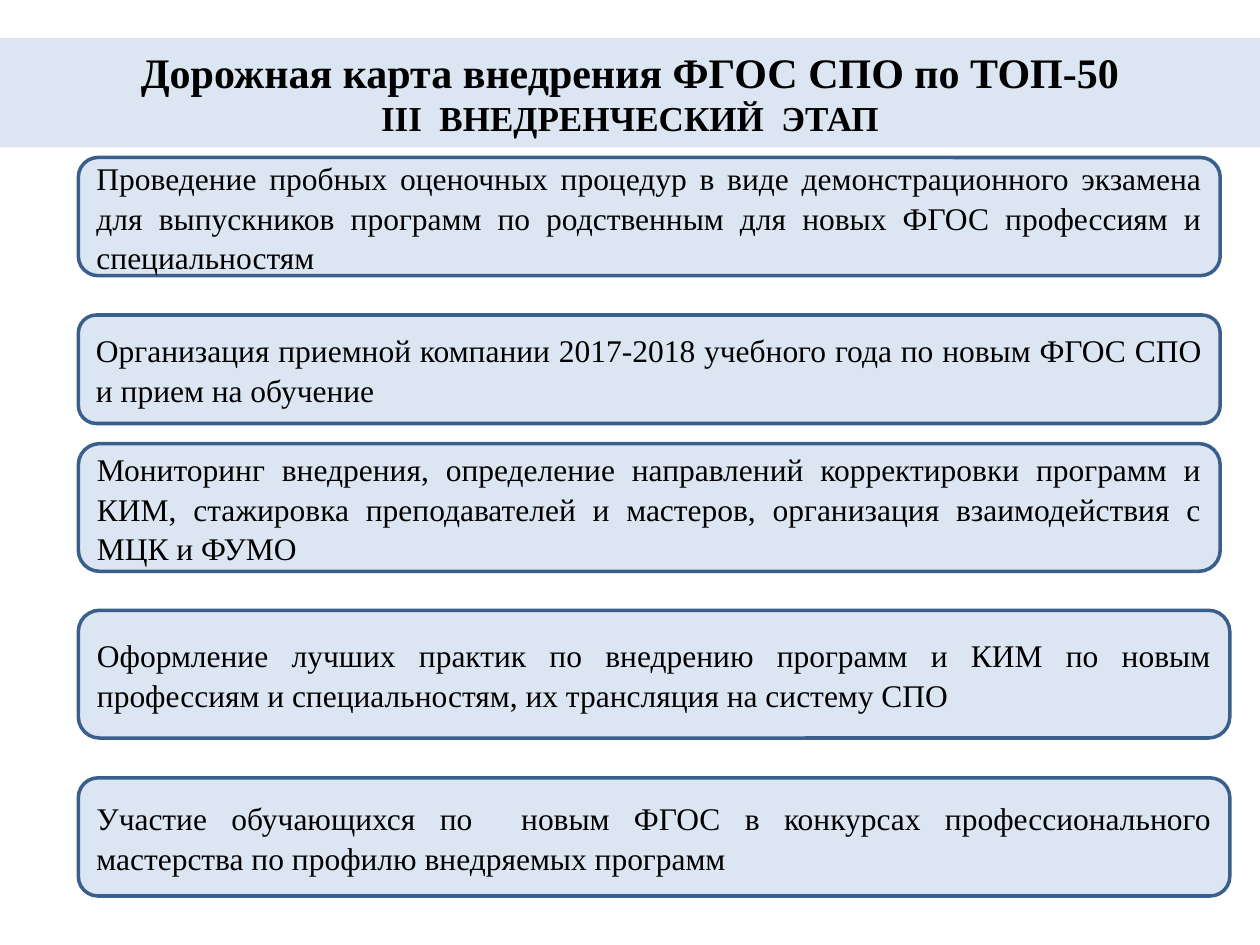
from pptx import Presentation
from pptx.dml.color import RGBColor as RGB
from pptx.enum.shapes import MSO_SHAPE as Kind
from pptx.enum.text import MSO_ANCHOR as Anchor, PP_ALIGN as Align
from pptx.util import Pt

# Content: heading lines with their size role
HEAD = [
    ("Дорожная карта внедрения ФГОС СПО по ТОП-50", "title"),
    ("III  ВНЕДРЕНЧЕСКИЙ  ЭТАП", "stage"),
]

# Content: steps as (top, width, height, text)
STEPS = [
    (90, 652.5, 67.5, "Проведение пробных оценочных процедур в виде демонстрационного экзамена "
     "для выпускников программ по родственным для новых ФГОС профессиям и специальностям"),
    (180, 652.5, 62, "Организация приемной компании 2017-2018 учебного года по новым ФГОС СПО "
     "и прием на обучение"),
    (253.5, 652.5, 73, "Мониторинг внедрения, определение направлений корректировки программ и КИМ, "
     "стажировка преподавателей и мастеров, организация взаимодействия с МЦК и ФУМО"),
    (348.75, 658, 73, "Оформление лучших практик по внедрению программ и КИМ по новым профессиям "
     "и специальностям, их трансляция на систему СПО"),
    (444.5, 658, 67.5, "Участие обучающихся по  новым ФГОС в конкурсах профессионального "
     "мастерства по профилю внедряемых программ"),
]

THEME = {
    "font": "Times New Roman",
    "fill": RGB(0xDC, 0xE6, 0xF2),
    "line": RGB(0x3A, 0x5F, 0x8C),
    "ink": RGB(0, 0, 0),
    "title": 24, "stage": 20, "step": 18,
}
WIDE, HIGH = 720, 540
LEFT = 44.75
BAND = (0, 21.75, WIDE, 62.5)


def add_box(slide, kind, area, lines, align, bold=False, edge=0, gap=1.0):
    """Draw a filled shape with one paragraph per (text, size role)."""
    box = slide.shapes.add_shape(kind, *map(Pt, area))
    box.shadow.inherit = False
    box.fill.solid()
    box.fill.fore_color.rgb = THEME["fill"]
    if edge:
        box.line.color.rgb = THEME["line"]
        box.line.width = Pt(edge)
    else:
        box.line.fill.background()
    frame = box.text_frame
    frame.word_wrap = True
    frame.vertical_anchor = Anchor.MIDDLE
    for i, (text, role) in enumerate(lines):
        para = frame.add_paragraph() if i else frame.paragraphs[0]
        para.alignment = align
        para.line_spacing = gap
        run = para.add_run()
        run.text = text
        font = run.font
        font.name = THEME["font"]
        font.size = Pt(THEME[role])
        font.bold = bold
        font.color.rgb = THEME["ink"]


def main():
    deck = Presentation()
    deck.slide_width, deck.slide_height = Pt(WIDE), Pt(HIGH)
    slide = deck.slides.add_slide(deck.slide_layouts[6])

    # Heading band
    add_box(slide, Kind.RECTANGLE, BAND, HEAD, Align.CENTER, bold=True)

    # Steps of the stage
    for top, width, height, text in STEPS:
        add_box(slide, Kind.FLOWCHART_ALTERNATE_PROCESS, (LEFT, top, width, height),
                [(text, "step")], Align.JUSTIFY, edge=2, gap=1.05)

    deck.save("out.pptx")


if __name__ == "__main__":
    main()
